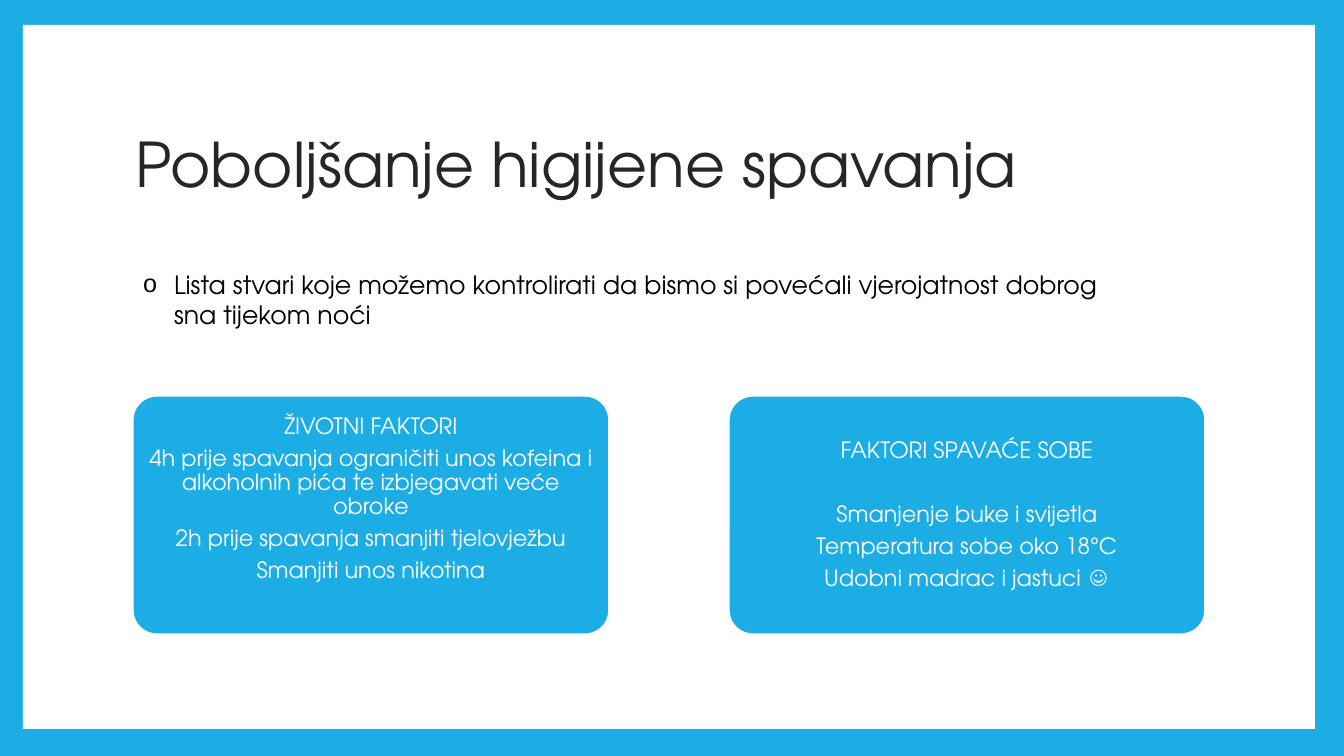
"""Build the slide on improving sleep hygiene."""
from lxml import etree
from pptx import Presentation, util as u
from pptx.dml.color import RGBColor
from pptx.enum import shapes, text
from pptx.oxml import ns

TITLE = "Poboljšanje higijene spavanja"
LIST = ("Lista stvari koje možemo kontrolirati da bismo si povećali "
        "vjerojatnost dobrog sna tijekom noći")
CARDS = [
    dict(head="ŽIVOTNI FAKTORI", gap=5.6, foot=34, items=[
        "4h prije spavanja ograničiti unos kofeina i alkoholnih pića "
        "te izbjegavati veće obroke",
        "2h prije spavanja smanjiti tjelovježbu",
        "Smanjiti unos nikotina"]),
    dict(head="FAKTORI SPAVAĆE SOBE", gap=28.5, foot=2, items=[
        "Smanjenje buke i svijetla",
        "Temperatura sobe oko 18°C",
        "Udobni madrac i jastuci ☺"]),
]
HUES = dict(blue="1CADE4", white="FFFFFF", dark="262626", black="000000")
FONT = "TeX Gyre Adventor"
SCALE = 914400 / 100.8
WIDE, HIGH = 1344, 756
LEFT, TOP, STEP = 133, 396, 596
CARD_W, CARD_H = 476, 238


def px(n):
    return u.Emu(round(n * SCALE))


def hue(name):
    return RGBColor.from_string(HUES[name])


def write(para, words, size, color, align="LEFT", line=1.0, after=0):
    para.alignment = getattr(text.PP_ALIGN, align)
    para.line_spacing = line
    para.space_before = u.Pt(0)
    para.space_after = u.Pt(after)
    run = para.add_run()
    run.text = words
    run.font.name = FONT
    run.font.size = u.Pt(size)
    run.font.color.rgb = hue(color)


def block(slide, kind, box, fill, edge=None):
    shape = slide.shapes.add_shape(kind, *map(px, box))
    shape.shadow.inherit = False
    shape.fill.solid()
    shape.fill.fore_color.rgb = hue(fill)
    if edge:
        shape.line.color.rgb = hue(edge)
        shape.line.width = u.Pt(1)
    else:
        shape.line.fill.background()
    return shape


def place(slide, holder, box, anchor):
    holder.left, holder.top, holder.width, holder.height = map(px, box)
    slide.shapes.element.append(holder.element)
    frame = holder.text_frame
    frame.word_wrap = True
    frame.auto_size = text.MSO_AUTO_SIZE.NONE
    frame.vertical_anchor = anchor
    return frame.paragraphs[0]


def bullet(para, mark, indent):
    props = para._p.get_or_add_pPr()
    props.set("marL", str(px(indent)))
    props.set("indent", str(px(-indent)))
    etree.SubElement(props, ns.qn("a:buChar")).set("char", mark)


def card(slide, col, data):
    shape = block(slide, shapes.MSO_SHAPE.ROUNDED_RECTANGLE,
                  (LEFT + col * STEP, TOP, CARD_W, CARD_H), "blue", "white")
    shape.adjustments[0] = 0.1
    frame = shape.text_frame
    frame.word_wrap = True
    frame.vertical_anchor = text.MSO_ANCHOR.MIDDLE
    frame.margin_left = frame.margin_right = px(3)
    frame.margin_top, frame.margin_bottom = px(2), px(data["foot"])
    look = dict(size=16, color="white", align="CENTER", line=0.9)
    write(frame.paragraphs[0], data["head"], after=data["gap"], **look)
    for item in data["items"]:
        write(frame.add_paragraph(), item, after=5.6, **look)


def main():
    deck = Presentation()
    deck.slide_width, deck.slide_height = px(WIDE), px(HIGH)
    slide = deck.slides.add_slide(deck.slide_layouts[1])
    title, body = slide.placeholders
    rect = shapes.MSO_SHAPE.RECTANGLE
    block(slide, rect, (0, 0, WIDE, HIGH), "blue")
    block(slide, rect, (23, 25, 1292, 704), "white")
    para = place(slide, title, (125, 84, 1080, 168), text.MSO_ANCHOR.MIDDLE)
    write(para, TITLE, 44, "dark", line=0.9)
    for col, data in enumerate(CARDS):
        card(slide, col, data)
    para = place(slide, body, (133, 264, 1016, 102), text.MSO_ANCHOR.TOP)
    write(para, LIST, 18, "black")
    bullet(para, "o", 31)
    deck.save("out.pptx")


if __name__ == "__main__":
    main()
